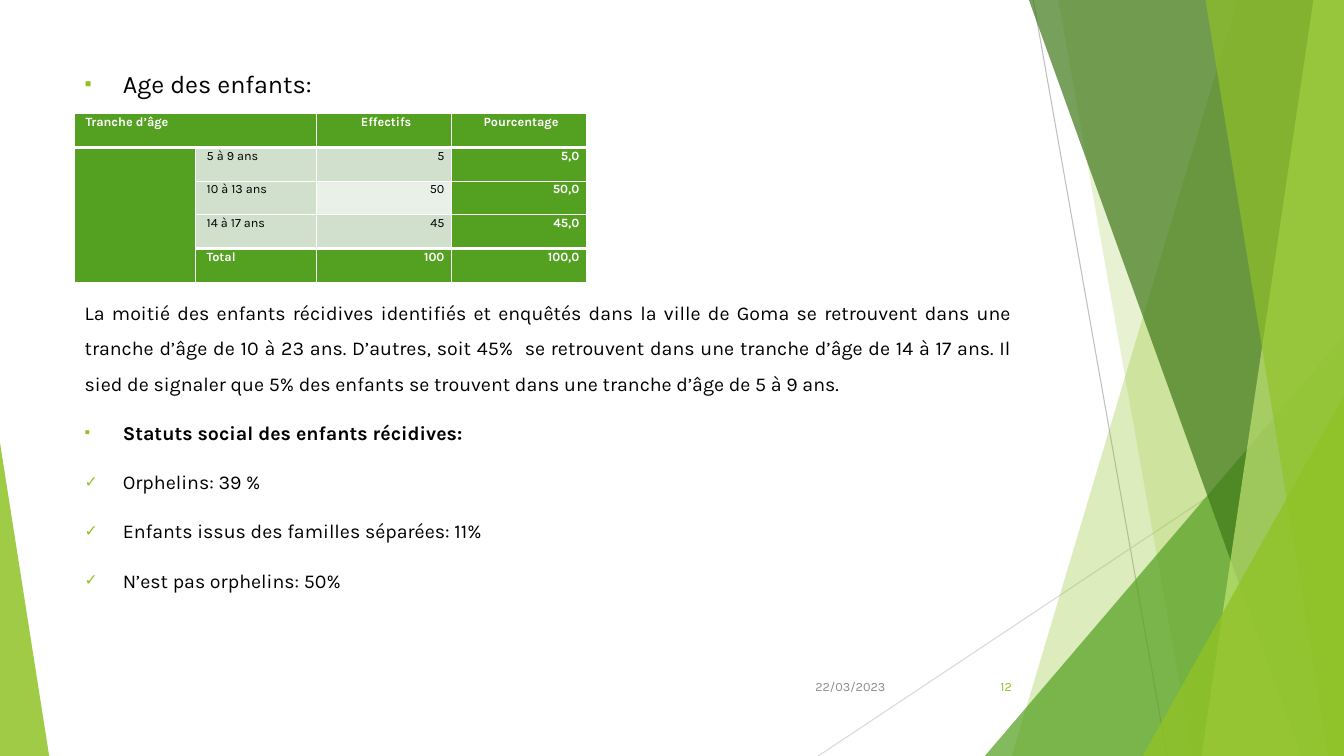
from collections import namedtuple

from lxml.etree import SubElement
from pptx import Presentation
from pptx.dml.color import RGBColor
from pptx.enum.shapes import MSO_CONNECTOR, MSO_SHAPE
from pptx.enum.text import MSO_ANCHOR, MSO_AUTO_SIZE, PP_ALIGN
from pptx.oxml.ns import qn
from pptx.util import Cm, Pt

Box = namedtuple("Box", "left top width height")

FONT = "Karla"
WHITE, BLACK, GREY = "FFFFFF", "000000", "8C8C8C"
LIME, GREEN, DARK_GREEN, PALE_LIME = "90C226", "54A021", "3F7819", "C0E474"
BAND, LIGHT_BAND = "D1DFCD", "E9F0E8"


def color(value):
    return RGBColor.from_string(value)


def format_runs(paragraph, size, value, bold=False):
    for run in paragraph.runs:
        run.font.name = FONT
        run.font.size = Pt(size)
        run.font.bold = bold
        run.font.color.rgb = color(value)


def paint(shape, value, opacity):
    shape.shadow.inherit = False
    shape.line.fill.background()
    shape.fill.solid()
    shape.fill.fore_color.rgb = color(value)
    tint = shape.fill._xPr.find(qn("a:solidFill"))[0]
    SubElement(tint, qn("a:alpha"), val=str(opacity * 1000))


def add_line(slide, start, end, value):
    points = [Cm(length) for length in (*start, *end)]
    line = slide.shapes.add_connector(MSO_CONNECTOR.STRAIGHT, *points)
    line.line.color.rgb = color(value)
    line.line.width = Pt(0.75)
    SubElement(line._element.spPr, qn("a:effectLst"))


def add_wedge(slide, box, top_offset, bottom_offset, value, opacity):
    right, bottom = box.left + box.width, box.top + box.height
    corners = [
        (right - top_offset, box.top),
        (right, box.top),
        (right, bottom),
        (right - bottom_offset, bottom),
    ]
    points = [(Cm(x), Cm(y)) for x, y in corners]
    builder = slide.shapes.build_freeform(*points[0])
    builder.add_line_segments(points[1:], close=True)
    paint(builder.convert_to_shape(), value, opacity)


def add_triangle(slide, box, apex, value, opacity):
    shape = slide.shapes.add_shape(
        MSO_SHAPE.ISOSCELES_TRIANGLE, *(Cm(length) for length in box)
    )
    shape.adjustments[0] = apex
    paint(shape, value, opacity)


def add_right_facets(slide, box):
    right, bottom = box.left + box.width, box.top + box.height

    def corner_triangle(width, height, value, opacity):
        corner = Box(right - width, bottom - height, width, height)
        add_triangle(slide, corner, 1, value, opacity)

    add_line(slide, (right - 7.83, box.top), (right - 4.46, bottom), "BFBFBF")
    add_line(slide, (right, box.top + 10.24), (box.left, bottom), "D9D9D9")
    add_wedge(slide, box, 2.68, 8.37, LIME, 30)
    add_wedge(slide, box, 7.2, 3.82, LIME, 20)
    corner_triangle(9.05, 10.59, GREEN, 72)
    add_wedge(slide, box, 7.94, 1.08, DARK_GREEN, 70)
    add_wedge(slide, box, 0.77, 3.59, PALE_LIME, 70)
    add_wedge(slide, box, 3.49, 0.39, LIME, 65)
    corner_triangle(5.07, 9.07, LIME, 80)


def set_bullet(paragraph, character):
    properties = paragraph._p.get_or_add_pPr()
    indent = Cm(0.96) if character else 0
    properties.set("marL", str(indent))
    properties.set("indent", str(-indent))
    if not character:
        SubElement(properties, qn("a:buNone"))
        return
    bullet_color = SubElement(properties, qn("a:buClr"))
    SubElement(bullet_color, qn("a:srgbClr"), val=LIME)
    SubElement(properties, qn("a:buSzPct"), val="80000")
    SubElement(properties, qn("a:buChar"), char=character)


def fill_body(slide, box):
    body = slide.placeholders[1]
    body.left, body.top, body.width, body.height = (Cm(length) for length in box)
    frame = body.text_frame
    frame.word_wrap = True
    frame.auto_size = MSO_AUTO_SIZE.NONE
    frame.vertical_anchor = MSO_ANCHOR.TOP
    entries = [
        ("Age des enfants:", "▪", 18, False, 10),
        (
            "La moitié des enfants récidives identifiés et enquêtés dans la ville "
            "de Goma se retrouvent dans une tranche d’âge de 10 à 23 ans. D’autres, "
            "soit 45%  se retrouvent dans une tranche d’âge de 14 à 17 ans. Il sied "
            "de signaler que 5% des enfants se trouvent dans une tranche d’âge de "
            "5 à 9 ans.",
            None, 14, False, 136,
        ),
        ("Statuts social des enfants récidives:", "▪", 14, True, 10),
        ("Orphelins: 39 %", "✓", 14, False, 10),
        ("Enfants issus des familles séparées: 11%", "✓", 14, False, 10),
        ("N’est pas orphelins: 50%", "✓", 14, False, 10),
    ]
    for index, (text, bullet, size, bold, space) in enumerate(entries):
        paragraph = frame.add_paragraph() if index else frame.paragraphs[0]
        paragraph.text = text
        paragraph.alignment = PP_ALIGN.JUSTIFY if index else PP_ALIGN.LEFT
        paragraph.line_spacing = 1.5 if index else 1.0
        paragraph.space_before = Pt(space)
        set_bullet(paragraph, bullet)
        format_runs(paragraph, size, BLACK, bold)


def set_borders(cell, top, bottom):
    properties = cell._tc.get_or_add_tcPr()
    widths = {"a:lnL": 1, "a:lnR": 1, "a:lnT": top, "a:lnB": bottom}
    for tag, width in widths.items():
        border = SubElement(properties, qn(tag), w=str(Pt(width)))
        fill = SubElement(border, qn("a:solidFill"))
        SubElement(fill, qn("a:srgbClr"), val=WHITE)


def add_age_table(slide, box):
    rows = [
        ("Tranche d’âge", "", "Effectifs", "Pourcentage"),
        ("", "5 à 9 ans", "5", "5,0"),
        ("", "10 à 13 ans", "50", "50,0"),
        ("", "14 à 17 ans", "45", "45,0"),
        ("", "Total", "100", "100,0"),
    ]
    last = len(rows) - 1
    table = slide.shapes.add_table(
        len(rows), len(rows[0]), *(Cm(length) for length in box)
    ).table
    table.first_row = table.horz_banding = False
    for column, width in zip(table.columns, (3.05, 3.05, 3.4, 3.4)):
        column.width = Cm(width)
    for row_index, row in enumerate(rows):
        table.rows[row_index].height = Cm(box.height / len(rows))
        for column_index, text in enumerate(row):
            cell = table.cell(row_index, column_index)
            strong = row_index in (0, last) or column_index in (0, 3)
            light = (row_index, column_index) == (2, 2)
            set_borders(
                cell,
                3 if row_index == 1 or (row_index == last and column_index) else 1,
                3 if row_index == 0 or (row_index == last - 1 and column_index) else 1,
            )
            cell.fill.solid()
            cell.fill.fore_color.rgb = color(
                GREEN if strong else LIGHT_BAND if light else BAND
            )
            cell.margin_left = cell.margin_right = Cm(0.18)
            cell.margin_top = cell.margin_bottom = 0
            paragraph = cell.text_frame.paragraphs[0]
            paragraph.text = text
            paragraph.line_spacing = 1.07
            paragraph._p.get_or_add_pPr().set("marL", str(Cm(0.1)))
            if column_index > 1:
                paragraph.alignment = PP_ALIGN.RIGHT if row_index else PP_ALIGN.CENTER
            format_runs(paragraph, 9, WHITE if strong else BLACK, strong)
    table.cell(0, 0).merge(table.cell(0, 1))
    table.cell(1, 0).merge(table.cell(last, 0))


def add_footer(slide, box):
    right = box.left + box.width
    for text, left, width, value in (
        ("12", right - 1.9, 1.9, LIME),
        ("22/03/2023", box.left, 2.54, GREY),
    ):
        place = Box(left, box.top, width, box.height)
        frame = slide.shapes.add_textbox(*(Cm(length) for length in place)).text_frame
        frame.word_wrap = True
        frame.vertical_anchor = MSO_ANCHOR.MIDDLE
        frame.text = text
        frame.paragraphs[0].alignment = PP_ALIGN.RIGHT
        format_runs(frame.paragraphs[0], 9, value)


def main():
    presentation = Presentation()
    presentation.slide_width, presentation.slide_height = Cm(33.87), Cm(19.05)
    slide = presentation.slides.add_slide(presentation.slide_layouts[1])
    title = slide.shapes.title._element
    title.getparent().remove(title)
    add_right_facets(slide, Box(20.62, 0, 13.25, 19.05))
    add_triangle(slide, Box(0, 11.15, 1.24, 7.9), 0, LIME, 85)
    fill_body(slide, Box(1.88, 1.6, 23.88, 15.19))
    add_age_table(slide, Box(1.88, 2.87, 12.9, 4.24))
    add_footer(slide, Box(20.02, 16.79, 5.73, 1.02))
    presentation.save("out.pptx")


if __name__ == "__main__":
    main()
